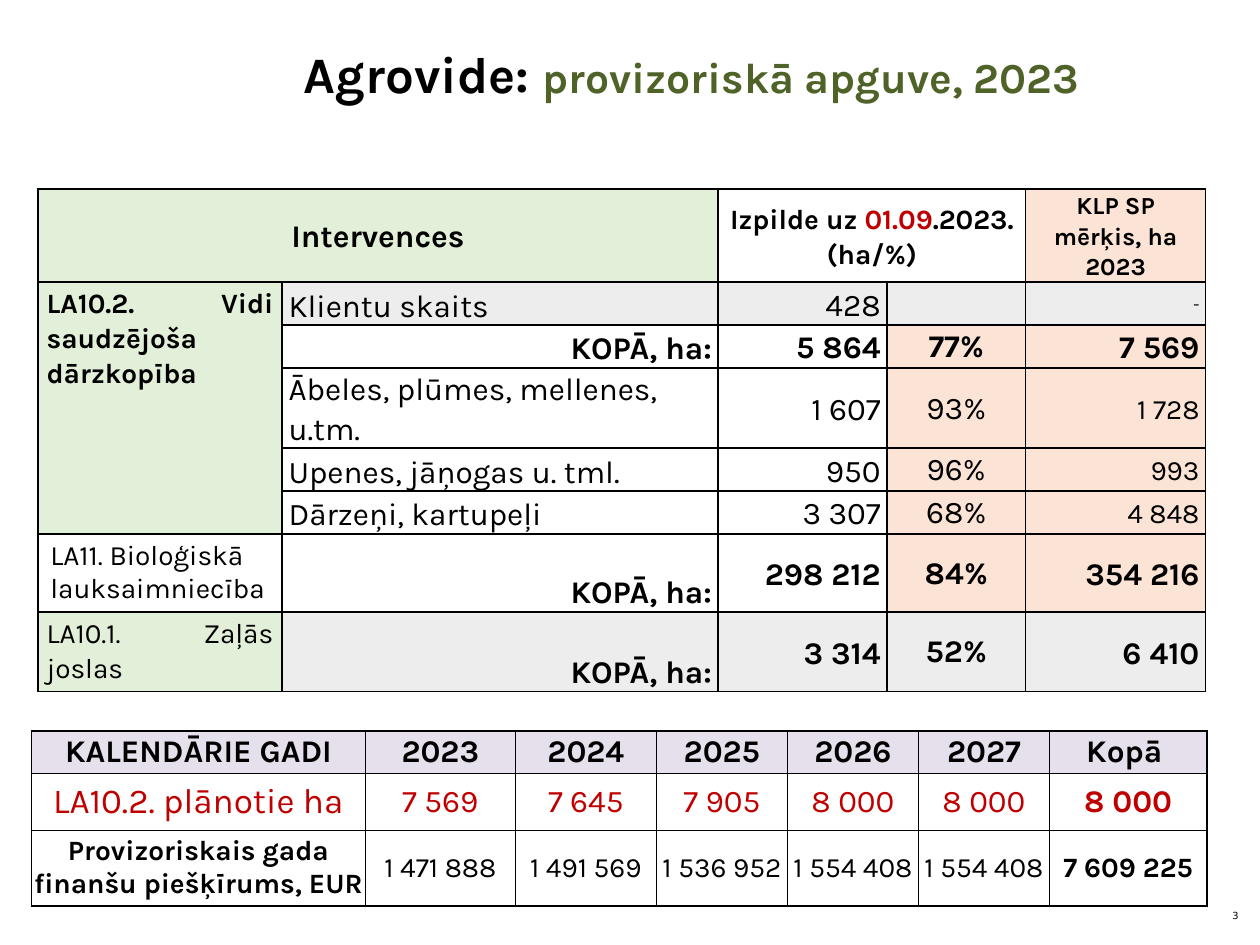
import pptx
import pptx.util
import pptx.dml.color
import pptx.enum.text
import pptx.oxml
import pptx.oxml.ns
from lxml import etree

Inches, Pt = pptx.util.Inches, pptx.util.Pt
ALIGN = pptx.enum.text.PP_ALIGN
ANCHOR = pptx.enum.text.MSO_ANCHOR
COLORS = {"black": "000000", "red": "C00000", "olive": "4F6228", "green": "E2EFD9",
          "peach": "FBE4D5", "grey": "EDEDED", "lilac": "E6E0EC", "white": "FFFFFF"}
TIGHT = (0.05, 0.01, 0.05, 0)
LABEL = (0.07, 0.03, 0.07, 0.03)
NONE = (0, 0, 0, 0)


def add_run(paragraph, text, size, bold=False, color="black", font="Karla"):
    run = paragraph.add_run()
    run.text = text
    run.font.size, run.font.bold, run.font.name = Pt(size), bold, font
    run.font.color.rgb = pptx.dml.color.RGBColor.from_string(COLORS[color])


def style_cell(cell, runs, fill=None, align=ALIGN.CENTER, anchor=ANCHOR.MIDDLE,
               insets=TIGHT, spaced=True):
    cell.margin_left, cell.margin_top, cell.margin_right, cell.margin_bottom = map(Inches, insets)
    cell.vertical_anchor = anchor
    paragraph = cell.text_frame.paragraphs[0]
    paragraph.alignment = align
    if spaced:
        paragraph.line_spacing, paragraph.space_after = 1.07, Pt(8)
    for run in runs:
        add_run(paragraph, *run)
    # Borders go before the fill in the cell properties
    properties = cell._tc.get_or_add_tcPr()
    for side in ("a:lnL", "a:lnR", "a:lnT", "a:lnB"):
        line = etree.SubElement(properties, pptx.oxml.ns.qn(side), w=str(Pt(1)))
        solid = etree.SubElement(line, pptx.oxml.ns.qn("a:solidFill"))
        etree.SubElement(solid, pptx.oxml.ns.qn("a:srgbClr"), val=COLORS["black"])
    if fill:
        cell.fill.solid()
        cell.fill.fore_color.rgb = pptx.dml.color.RGBColor.from_string(COLORS[fill])
    else:
        cell.fill.background()


presentation = pptx.Presentation()
presentation.slide_width, presentation.slide_height = Inches(10), Inches(7.5)
slide = presentation.slides.add_slide(presentation.slide_layouts[5])

# Title and page number
title = slide.shapes.title
title.left, title.top, title.width, title.height = map(Inches, (2.34, 0.08, 6.84, 1.06))
page_number = slide.shapes.add_textbox(*map(Inches, (9.65, 7.19, 0.25, 0.31)))
for shape, anchor, align in ((title, ANCHOR.MIDDLE, ALIGN.LEFT),
                             (page_number, ANCHOR.TOP, ALIGN.RIGHT)):
    frame = shape.text_frame
    frame.word_wrap, frame.auto_size = True, pptx.enum.text.MSO_AUTO_SIZE.NONE
    frame.vertical_anchor = anchor
    frame.margin_left = frame.margin_right = Inches(0.07)
    frame.margin_top = frame.margin_bottom = Inches(0.04)
    frame.paragraphs[0].alignment = align
    frame.paragraphs[0].line_spacing = 0.9
add_run(title.text_frame.paragraphs[0], "Agrovide: ", 29.2, True)
add_run(title.text_frame.paragraphs[0], "provizoriskā apguve, 2023", 24.4, True, "olive")
add_run(page_number.text_frame.paragraphs[0], "3", 5.6, font="DejaVu Sans")

# Both table grids
tables = []
for left, top, widths, heights in (
        (0.3, 1.5, (1.94, 3.46, 1.34, 1.1, 1.43),
         (0.74, 0.34, 0.34, 0.63, 0.34, 0.34, 0.62, 0.63)),
        (0.25, 5.8, (2.65, 1.19, 1.12, 1.04, 1.04, 1.04, 1.25), (0.34, 0.45, 0.6))):
    table = slide.shapes.add_table(len(heights), len(widths), Inches(left), Inches(top),
                                   Inches(sum(widths)), Inches(sum(heights))).table
    table.first_row = table.horz_banding = False
    for column, width in zip(table.columns, widths):
        column.width = Inches(width)
    for row, height in zip(table.rows, heights):
        row.height = Inches(height)
    tables.append(table)
interventions, calendar = tables

# Interventions: header and first column
interventions.cell(0, 0).merge(interventions.cell(0, 1))
interventions.cell(0, 2).merge(interventions.cell(0, 3))
interventions.cell(1, 0).merge(interventions.cell(5, 0))
style_cell(interventions.cell(0, 0), [("Intervences", 18, True)], "green", insets=LABEL)
style_cell(interventions.cell(0, 2), [("Izpilde uz ", 16, True), ("01.09", 16, True, "red"),
                                      (".2023. (ha/%)", 16, True)])
style_cell(interventions.cell(0, 4), [("KLP SP mērķis, ha 2023", 14, True)], "peach")
style_cell(interventions.cell(1, 0), [("LA10.2. Vidi saudzējoša dārzkopība", 16, True)],
           "green", ALIGN.JUSTIFY, ANCHOR.TOP, LABEL)
style_cell(interventions.cell(6, 0), [("LA11. Bioloģiskā lauksaimniecība", 16)], None,
           ALIGN.LEFT, ANCHOR.TOP, (0.1, 0.05, 0.1, 0.05), False)
style_cell(interventions.cell(7, 0), [("LA10.1. Zaļās joslas", 16)],
           "green", ALIGN.JUSTIFY, ANCHOR.TOP, LABEL)

# Interventions: label, hectares, share, target, target size, row fill, share and target fill
TOTAL = "KOPĀ, ha:"
body = [
    ("Klientu skaits", "428", "", "-", 10, "grey", "grey"),
    (TOTAL, "5 864", "77%", "7 569", 18, None, "peach"),
    ("Ābeles, plūmes, mellenes, u.tm.", "1 607", "93%", "1 728", 16, None, "peach"),
    ("Upenes, jāņogas u. tml.", "950", "96%", "993", 16, None, "peach"),
    ("Dārzeņi, kartupeļi", "3 307", "68%", "4 848", 16, None, "peach"),
    (TOTAL, "298 212", "84%", "354 216", 18, None, "peach"),
    (TOTAL, "3 314", "52%", "6 410", 18, "grey", "grey"),
]
for row, (label, area, share, target, target_size, fill, side_fill) in enumerate(body, 1):
    bold = label == TOTAL
    style_cell(interventions.cell(row, 1), [(label, 18, bold)], fill,
               ALIGN.RIGHT if bold else ALIGN.LEFT, ANCHOR.BOTTOM)
    style_cell(interventions.cell(row, 2), [(area, 18, bold)], fill, ALIGN.RIGHT)
    style_cell(interventions.cell(row, 3), [(share, 18, bold)] if share else [], side_fill,
               spaced=False)
    style_cell(interventions.cell(row, 4), [(target, target_size, bold)], side_fill, ALIGN.RIGHT)

# Calendar years: texts, label size, value size, colour, fill, bold columns
years = [
    (("KALENDĀRIE GADI", "2023", "2024", "2025", "2026", "2027", "Kopā "),
     18, 18, "black", "lilac", range(7)),
    (("LA10.2. plānotie ha", "7 569", "7 645", "7 905", "8 000", "8 000", "8 000"),
     20, 18, "red", "white", (6,)),
    (("Provizoriskais gada finanšu piešķīrums, EUR ", "1 471 888", "1 491 569", "1 536 952",
      "1 554 408", "1 554 408", "7 609 225"), 16, 16, "black", "white", (0, 6)),
]
for row, (texts, label_size, value_size, color, fill, bold_columns) in enumerate(years):
    for column, text in enumerate(texts):
        size = value_size if column else label_size
        style_cell(calendar.cell(row, column), [(text, size, column in bold_columns, color)],
                   fill, insets=NONE, spaced=False)

presentation.save("out.pptx")
